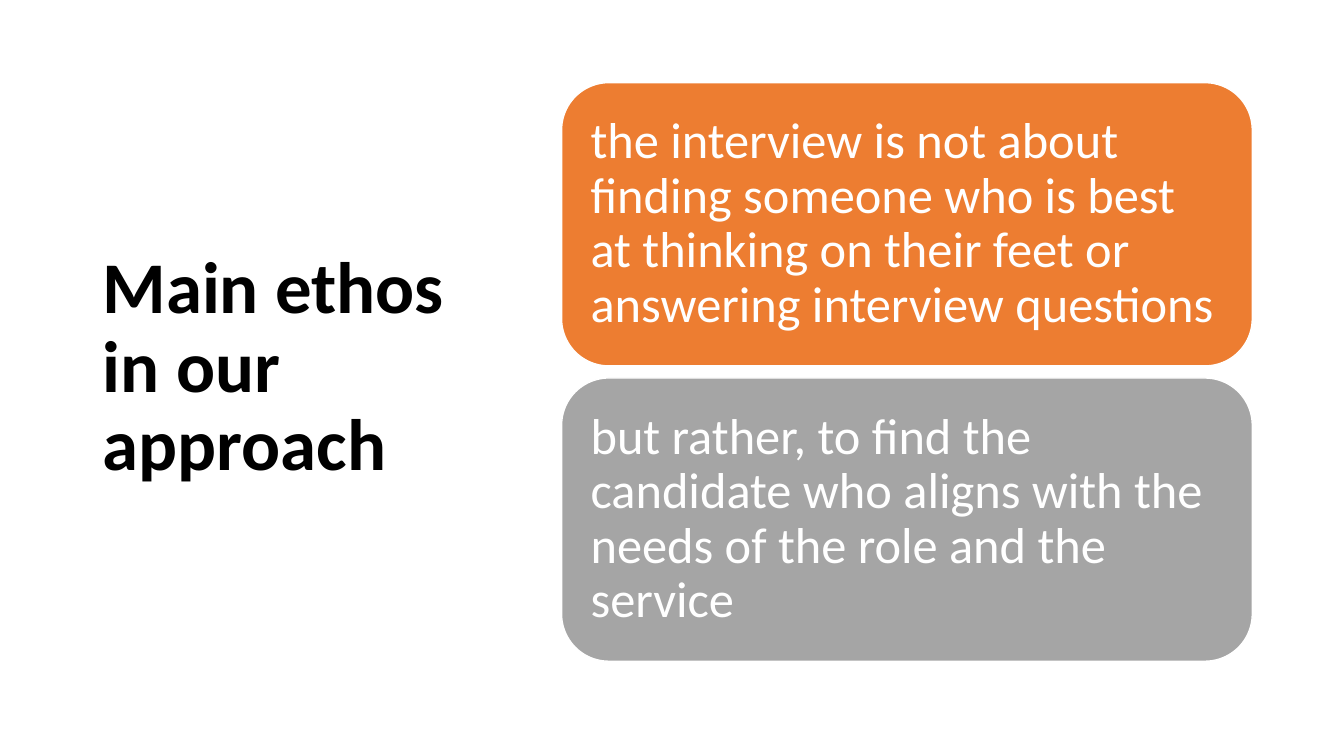
import pptx
import pptx.util
import pptx.dml.color
import pptx.enum.shapes
import pptx.enum.text

Inches = pptx.util.Inches
RGBColor = pptx.dml.color.RGBColor

BLACK = RGBColor(0x00, 0x00, 0x00)
WHITE = RGBColor(0xFF, 0xFF, 0xFF)
ORANGE = RGBColor(0xED, 0x7D, 0x31)
GRAY = RGBColor(0xA5, 0xA5, 0xA5)

FONT = "Calibri"
CARD_LEFT, CARD_TOP = 5.57, 0.82
CARD_WIDTH, CARD_HEIGHT = 6.85, 2.81
CARD_PITCH = 2.93

STATEMENTS = [
    ("the interview is not about finding someone who is best at thinking "
     "on their feet or answering interview questions", ORANGE),
    ("but rather, to find the candidate who aligns with the needs of the "
     "role and the service", GRAY),
]


def write_text(shape, text, size, color, bold=False, inset=0.1):
    """Put one left-aligned, vertically centred paragraph in a shape."""
    frame = shape.text_frame
    frame.word_wrap = True
    frame.vertical_anchor = pptx.enum.text.MSO_ANCHOR.MIDDLE
    frame.margin_left = frame.margin_right = Inches(inset)
    frame.margin_top = frame.margin_bottom = Inches(inset)
    paragraph = frame.paragraphs[0]
    paragraph.alignment = pptx.enum.text.PP_ALIGN.LEFT
    paragraph.line_spacing = 0.9
    run = paragraph.add_run()
    run.text = text
    run.font.name = FONT
    run.font.size = pptx.util.Pt(size)
    run.font.bold = bold
    run.font.color.rgb = color


def add_title(slide, text):
    box = slide.shapes.add_textbox(
        Inches(0.92), Inches(0.61), Inches(3.69), Inches(6.09))
    write_text(box, text, size=52, color=BLACK, bold=True)


def add_card(slide, top, text, fill):
    card = slide.shapes.add_shape(
        pptx.enum.shapes.MSO_SHAPE.ROUNDED_RECTANGLE,
        Inches(CARD_LEFT), Inches(top), Inches(CARD_WIDTH), Inches(CARD_HEIGHT))
    card.shadow.inherit = False
    card.fill.solid()
    card.fill.fore_color.rgb = fill
    card.line.color.rgb = WHITE
    card.line.width = pptx.util.Pt(1)
    write_text(card, text, size=36, color=WHITE, inset=0.15)


def main():
    presentation = pptx.Presentation()
    presentation.slide_width = Inches(13.33)
    presentation.slide_height = Inches(7.5)
    slide = presentation.slides.add_slide(presentation.slide_layouts[6])

    # Heading on the left
    add_title(slide, "Main ethos in our approach")

    # Stacked statements on the right
    for index, (text, fill) in enumerate(STATEMENTS):
        add_card(slide, CARD_TOP + index * CARD_PITCH, text, fill)

    presentation.save("out.pptx")


if __name__ == "__main__":
    main()
